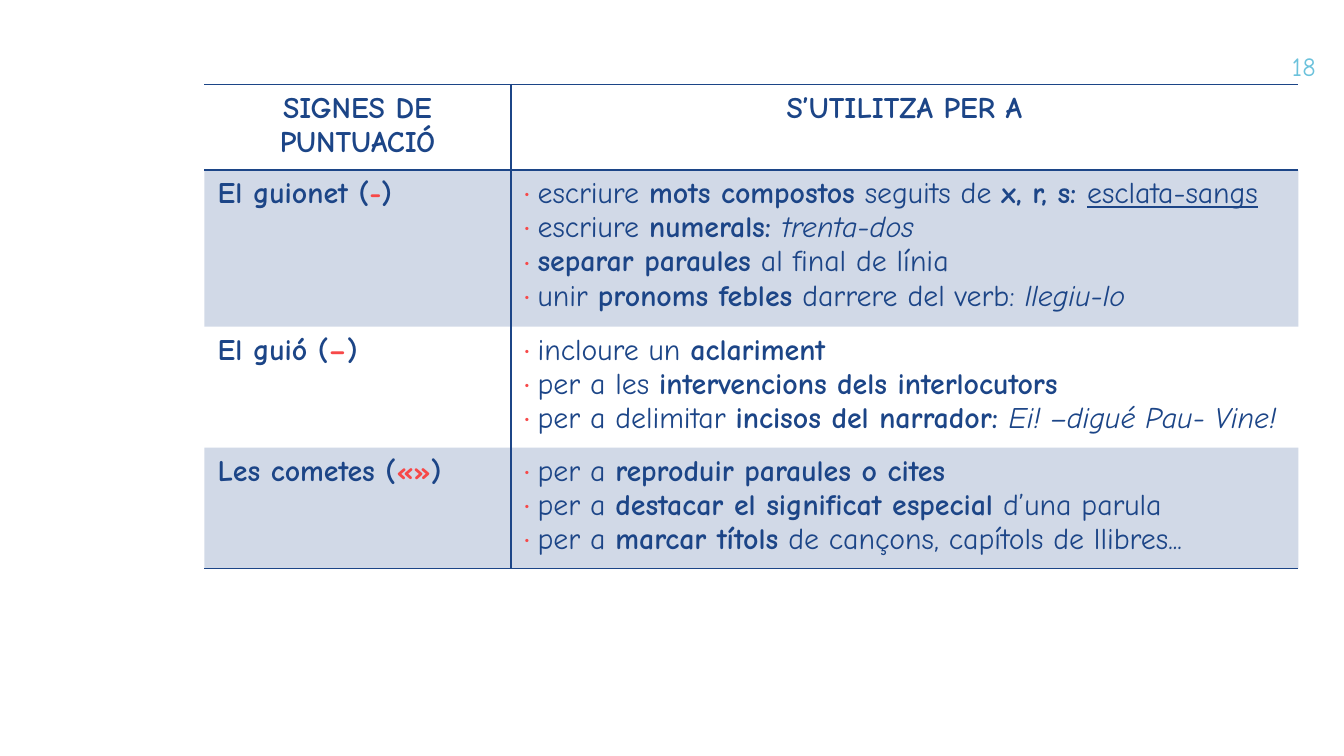
"""Build a slide with a table on the use of Catalan punctuation marks."""
from lxml import etree
from pptx import Presentation
from pptx.dml.color import RGBColor
from pptx.enum.text import MSO_ANCHOR, PP_ALIGN
from pptx.oxml.ns import qn
from pptx.util import Inches, Pt

MID = MSO_ANCHOR.MIDDLE
LEFT, CENTER, RIGHT = PP_ALIGN.LEFT, PP_ALIGN.CENTER, PP_ALIGN.RIGHT
HUES = {"navy": "1C4587", "red": "F74848", "sky": "6CC2DC"}
PLAIN = {"name": "Comic Neue", "size": Pt(16), "bold": False}
STYLES = {
    "*": {"bold": True},
    "_": {"underline": True},
    "/": {"italic": True},
    "~": {"bold": True, "hue": "red"},
}
NOSTYLE = "{2D5ABB26-0587-4C30-8999-92F81FD0307C}"
HEAD = ["SIGNES DE PUNTUACIÓ", "S’UTILITZA PER A"]
BODY = [
    ("*El guionet (|~-|*)", [
        "escriure |*mots compostos| seguits de |*x, r, s: |_esclata-sangs",
        "escriure |*numerals: |/trenta-dos",
        "*separar paraules| al final de línia",
        "unir |*pronoms febles| darrere del verb: |/llegiu-lo",
    ]),
    ("*El guió (|~–|*)", [
        "incloure un |*aclariment",
        "per a les |*intervencions dels interlocutors",
        "per a delimitar |*incisos del narrador: |/Ei! –digué Pau- Vine!",
    ]),
    ("*Les cometes (|~«»|*)", [
        "per a |*reproduir paraules o cites",
        "per a |*destacar el significat especial| d’una parula",
        "per a |*marcar títols| de cançons, capítols de llibres...",
    ]),
]


def write(par, text, align=LEFT, **extra):
    par.alignment = align
    for part in text.split("|"):
        style = STYLES.get(part[0], {})
        look = {"hue": "navy", **PLAIN, **style, **extra}
        run = par.add_run()
        run.text = part[1:] if style else part
        run.font.color.rgb = RGBColor.from_string(HUES[look.pop("hue")])
        for key, value in look.items():
            setattr(run.font, key, value)


def add(node, tag, **attrs):
    return etree.SubElement(node, qn(tag), {k: str(v) for k, v in attrs.items()})


deck = Presentation()
deck.slide_width = wide = Inches(10)
deck.slide_height = high = wide * 9 // 16
slide = deck.slides.add_slide(deck.slide_layouts[6])

box = slide.shapes.add_textbox(
    int(wide * 0.919), int(high * 0.05), int(wide * 0.06), int(high * 0.076)
)
frame = box.text_frame
frame.word_wrap = True
frame.vertical_anchor = MID
for side in ("left", "right", "top", "bottom"):
    setattr(frame, f"margin_{side}", 0)
write(frame.paragraphs[0], "18", RIGHT, size=Pt(14), hue="sky")

cols = [int(wide * share) for share in (0.228, 0.586)]
tall = int(high * 0.592)
last = len(BODY)
holder = slide.shapes.add_table(
    last + 1, len(cols), int(wide * 0.152), int(high * 0.112), sum(cols), tall
)
grid = holder.table
grid.first_row = grid.horz_banding = False
grid._tbl.tblPr.find(qn("a:tableStyleId")).text = NOSTYLE
for col, size in zip(grid.columns, cols):
    col.width = size
for row in grid.rows:
    row.height = 0
holder.height = tall

for c, text in enumerate(HEAD):
    write(grid.cell(0, c).text_frame.paragraphs[0], text, CENTER, bold=True)
pad = Inches(0.1)
for r, (sign, uses) in enumerate(BODY, 1):
    write(grid.cell(r, 0).text_frame.paragraphs[0], sign)
    frame = grid.cell(r, 1).text_frame
    for i, use in enumerate(uses):
        par = frame.add_paragraph() if i else frame.paragraphs[0]
        props = par._p.get_or_add_pPr()
        props.set("marL", str(pad))
        props.set("indent", str(-pad))
        add(add(props, "a:buClr"), "a:srgbClr", val=HUES["red"])
        add(props, "a:buSzPct", val=61000)
        add(props, "a:buFont", typeface=PLAIN["name"])
        add(props, "a:buChar", char="•")
        write(par, use)

for r in range(last + 1):
    for c in range(len(cols)):
        cell = grid.cell(r, c)
        props = cell._tc.get_or_add_tcPr()
        edges = {"L": c == 1, "R": c == 0, "T": r == 0, "B": r in (0, last)}
        for edge, shown in edges.items():
            if shown:
                rule = add(props, f"a:ln{edge}", w=Pt(1))
                add(add(rule, "a:solidFill"), "a:srgbClr", val=HUES["navy"])
        if r % 2:
            cell.fill.solid()
            cell.fill.fore_color.rgb = RGBColor.from_string(HUES["navy"])
            add(props.find(qn("a:solidFill"))[0], "a:alpha", val=20000)
        else:
            cell.fill.background()

deck.save("out.pptx")
